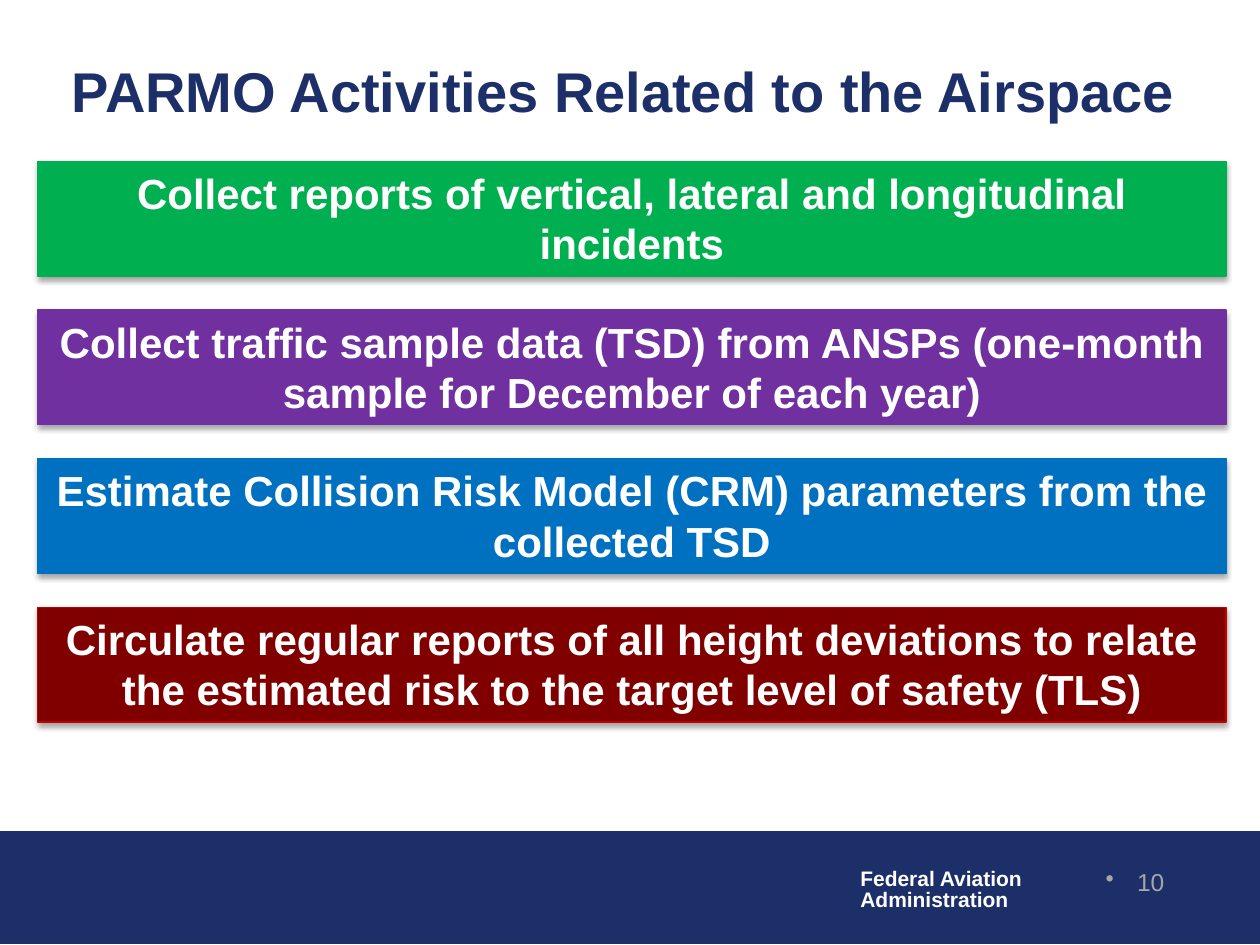
import pptx
import pptx.dml.color
import pptx.enum.shapes
import pptx.enum.text
import pptx.oxml
import pptx.oxml.ns
import pptx.util

Inches = pptx.util.Inches
Pt = pptx.util.Pt
RGBColor = pptx.dml.color.RGBColor
Align = pptx.enum.text.PP_ALIGN
Anchor = pptx.enum.text.MSO_ANCHOR

NAVY = RGBColor(0x1D, 0x2F, 0x68)
WHITE = RGBColor(0xFF, 0xFF, 0xFF)
GRAY = RGBColor(0xA6, 0xA6, 0xA6)
GREEN = RGBColor(0x00, 0xB0, 0x50)
PURPLE = RGBColor(0x70, 0x30, 0xA0)
BLUE = RGBColor(0x00, 0x70, 0xC0)
MAROON = RGBColor(0x80, 0x00, 0x00)
RED = RGBColor(0xC0, 0x00, 0x00)

SLIDE_WIDTH, SLIDE_HEIGHT = 10, 7.5
ROW_LEFT, ROW_TOP = 0.3, 1.28
ROW_WIDTH, ROW_HEIGHT, ROW_PITCH = 9.43, 0.91, 1.18

# Text, fill colour, line colour
ACTIVITIES = [
    ("Collect reports of vertical, lateral and longitudinal incidents",
     GREEN, GREEN),
    ("Collect traffic sample data (TSD) from ANSPs "
     "(one-month sample for December of each year)", PURPLE, PURPLE),
    ("Estimate Collision Risk Model (CRM) parameters from the collected TSD",
     BLUE, BLUE),
    ("Circulate regular reports of all height deviations to relate "
     "the estimated risk to the target level of safety (TLS)", MAROON, RED),
]


def format_paragraph(para, size, color, bold=True, align=Align.LEFT):
    para.alignment = align
    para.font.name = "Arial"
    para.font.size = Pt(size)
    para.font.bold = bold
    para.font.color.rgb = color


def add_rectangle(page, left, top, width, height, fill, line):
    box = page.shapes.add_shape(
        pptx.enum.shapes.MSO_SHAPE.RECTANGLE,
        Inches(left), Inches(top), Inches(width), Inches(height))
    box.shadow.inherit = False
    box.fill.solid()
    box.fill.fore_color.rgb = fill
    box.line.color.rgb = line
    box.line.width = Pt(0.75)
    return box


def add_drop_shadow(box):
    effects = box._element.spPr.find(pptx.oxml.ns.qn("a:effectLst"))
    effects.append(pptx.oxml.parse_xml(
        f'<a:outerShdw {pptx.oxml.ns.nsdecls("a")} blurRad="{Pt(3.1)}" '
        f'dist="{Pt(1.8)}" dir="5400000" rotWithShape="0">'
        '<a:srgbClr val="000000"><a:alpha val="35000"/></a:srgbClr>'
        '</a:outerShdw>'))


def add_bullet(para, indent):
    """Give the paragraph a round bullet with a hanging indent."""
    properties = para._p.get_or_add_pPr()
    properties.set("marL", str(Inches(indent)))
    properties.set("indent", str(-Inches(indent)))
    properties.append(pptx.oxml.parse_xml(
        f'<a:buChar {pptx.oxml.ns.nsdecls("a")} char="•"/>'))


def add_title(page, text):
    title = page.shapes.title
    title.left, title.top = Inches(0.47), Inches(0.38)
    title.width, title.height = Inches(9.27), Inches(0.67)
    title.text_frame.text = text
    title.text_frame.vertical_anchor = Anchor.MIDDLE
    format_paragraph(title.text_frame.paragraphs[0], 32, NAVY)


def add_activity(page, row, text, fill, line):
    box = add_rectangle(page, ROW_LEFT, ROW_TOP + row * ROW_PITCH,
                        ROW_WIDTH, ROW_HEIGHT, fill, line)
    add_drop_shadow(box)
    frame = box.text_frame
    frame.word_wrap = True
    frame.vertical_anchor = Anchor.TOP
    frame.text = text
    format_paragraph(frame.paragraphs[0], 24, WHITE, align=Align.CENTER)


def add_footer(page, number):
    top = 0.88 * SLIDE_HEIGHT
    add_rectangle(page, 0, top, SLIDE_WIDTH, 0.89, NAVY, NAVY)

    agency = page.shapes.add_textbox(
        Inches(6.73), Inches(6.85), Inches(1.5), Inches(0.44)).text_frame
    agency.word_wrap = False
    agency.text = "Federal Aviation\nAdministration"
    for para in agency.paragraphs:
        para.line_spacing = 0.85
        format_paragraph(para, 12, WHITE)

    counter = page.shapes.add_textbox(
        Inches(8.38), Inches(6.83), Inches(0.96), Inches(0.5)).text_frame
    counter.word_wrap = True
    counter.text = number
    para = counter.paragraphs[0]
    add_bullet(para, 0.25)
    format_paragraph(para, 14, GRAY, bold=False, align=Align.RIGHT)


def main():
    deck = pptx.Presentation()
    deck.slide_width = Inches(SLIDE_WIDTH)
    deck.slide_height = Inches(SLIDE_HEIGHT)
    page = deck.slides.add_slide(deck.slide_layouts.get_by_name("Title Only"))
    add_footer(page, "10")
    add_title(page, "PARMO Activities Related to the Airspace")
    for row, (text, fill, line) in enumerate(ACTIVITIES):
        add_activity(page, row, text, fill, line)
    deck.save("out.pptx")


if __name__ == "__main__":
    main()
